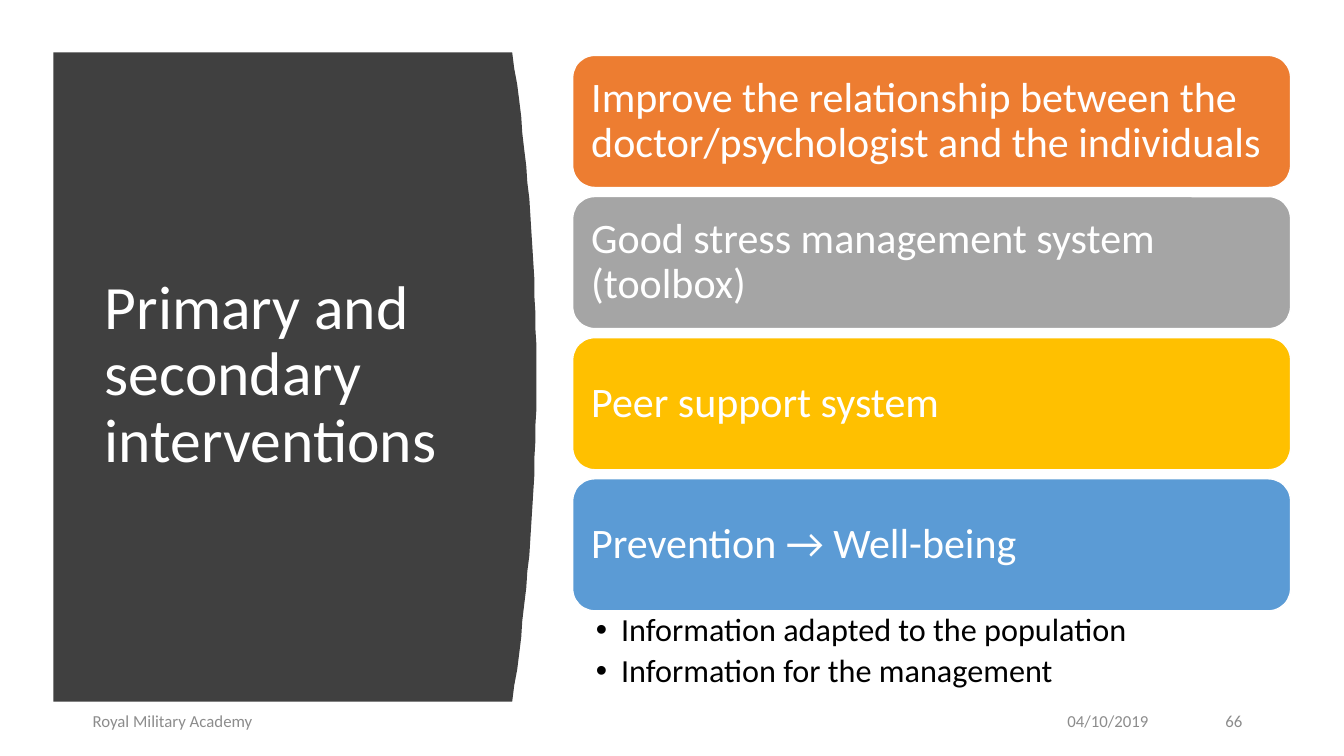
from pptx import Presentation
from pptx.dml.color import RGBColor
from pptx.enum.shapes import MSO_SHAPE
from pptx.enum.text import MSO_ANCHOR, MSO_AUTO_SIZE, PP_ALIGN
from pptx.oxml.ns import qn
from pptx.util import Pt
from lxml import etree

ROUND = MSO_SHAPE.ROUNDED_RECTANGLE
TOP, MID = MSO_ANCHOR.TOP, MSO_ANCHOR.MIDDLE
LEFT, RIGHT = PP_ALIGN.LEFT, PP_ALIGN.RIGHT
PX = 9144  # 100 px to the inch
FONT = "Calibri"


def color(code):
    return RGBColor.from_string(code)


def write(shape, *lines, size, ink="FFFFFF", align=LEFT, anchor=MID,
          pad=(10, 5), lead=0.9, after=0, bullet=None):
    frame = shape.text_frame
    frame.word_wrap = True
    frame.auto_size = MSO_AUTO_SIZE.NONE
    frame.vertical_anchor = anchor
    frame.margin_left = frame.margin_right = pad[0] * PX
    frame.margin_top = frame.margin_bottom = pad[1] * PX
    for i, line in enumerate(lines):
        para = frame.add_paragraph() if i else frame.paragraphs[0]
        para.alignment = align
        para.line_spacing = lead
        para.space_before = Pt(0)
        para.space_after = Pt(after)
        if bullet:
            props = para._p.get_or_add_pPr()
            props.set("marL", str(25 * PX))
            props.set("indent", str(-25 * PX))
            etree.SubElement(props, qn("a:buChar"), char=bullet)
        run = para.add_run()
        run.text = line
        run.font.name = FONT
        run.font.size = Pt(size)
        run.font.color.rgb = color(ink)


deck = Presentation()
deck.slide_width, deck.slide_height = 1333 * PX, 750 * PX
slide = deck.slides.add_slide(deck.slide_layouts[1])
shapes = slide.shapes
title, body = slide.placeholders

# Dark panel with a bowed right edge
top, base, edge, bow = 52, 696, 508, 24
mid, half = (top + base) / 2, (base - top) / 2
curve = []
for step in range(41):
    y = top + (base - top) * step / 40
    curve.append((edge + bow * (1 - ((y - mid) / half) ** 2), y))
pen = shapes.build_freeform(53, top, scale=PX)
pen.add_line_segments(curve + [(53, base)], close=True)
panel = pen.convert_to_shape()
panel.shadow.inherit = False
panel.fill.solid()
panel.fill.fore_color.rgb = color("404040")
panel.line.fill.background()
shapes._spTree.insert(2, panel._element)  # behind the title

# Title
title.left, title.top, title.width, title.height = [
    n * PX for n in (94, 111, 374, 524)]
write(title, "Primary and secondary interventions", size=44)

# Cards
cards = [
    ("Improve the relationship between the doctor/psychologist "
     "and the individuals", "ED7D31"),
    ("Good stress management system (toolbox)", "A5A5A5"),
    ("Peer support system", "FFC000"),
    ("Prevention → Well-being", "5B9BD5"),
]
for i, (text, fill) in enumerate(cards):
    card = shapes.add_shape(ROUND, 568 * PX, (55 + 140 * i) * PX,
                            712 * PX, 131 * PX)
    card.shadow.inherit = False
    card.fill.solid()
    card.fill.fore_color.rgb = color(fill)
    card.line.color.rgb = color("FFFFFF")
    card.line.width = Pt(1)
    write(card, text, size=30, pad=(12, 12))

# Bullets under the last card
body.left, body.top, body.width, body.height = [
    n * PX for n in (568, 605, 712, 87)]
write(body, "Information adapted to the population",
      "Information for the management", size=23, ink="000000",
      anchor=TOP, pad=(23, 4), after=4.6, bullet="•")

# Footer
for text, x, wide, align in [
    ("Royal Military Academy", 82, 450, LEFT),
    ("04/10/2019", 849, 300, RIGHT),
    ("66", 1173, 69, RIGHT),
]:
    note = shapes.add_textbox(x * PX, 695 * PX, wide * PX, 40 * PX)
    write(note, text, size=12, ink="8C8C8C", align=align, lead=1.0, after=6)

deck.save("out.pptx")
